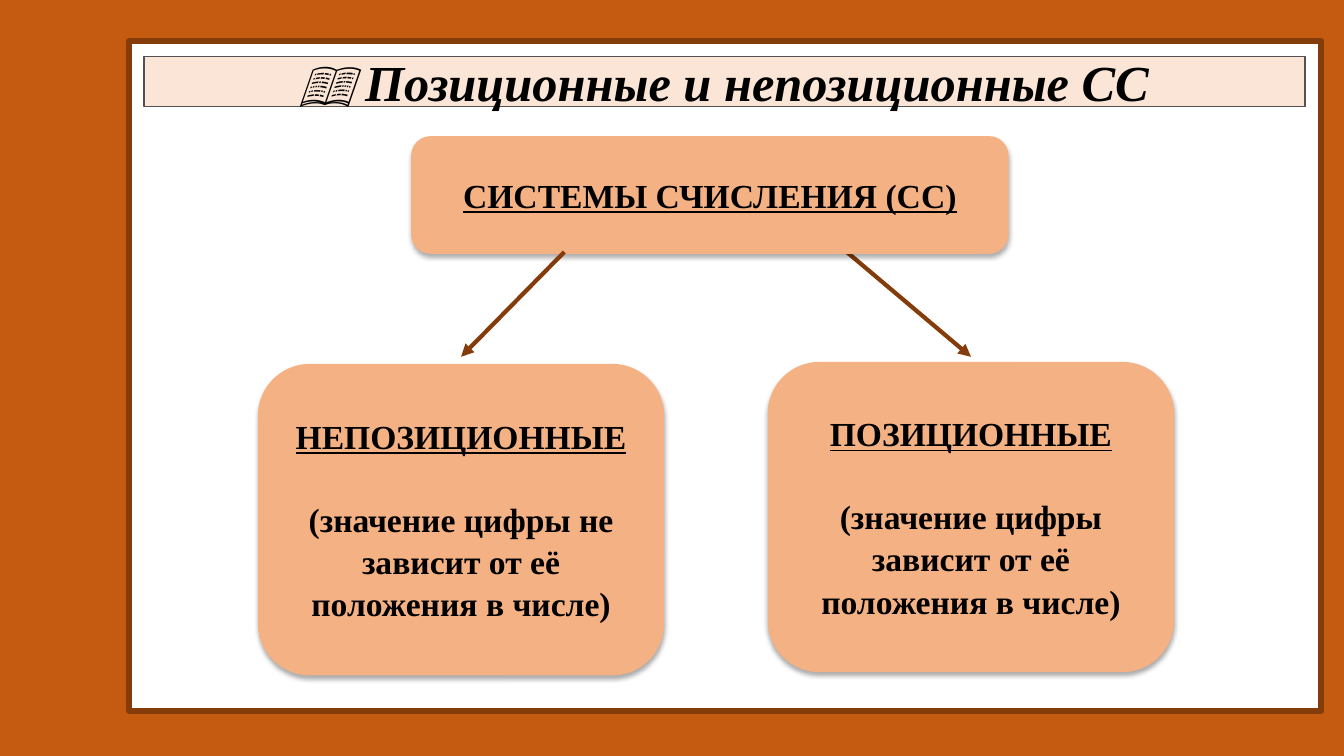
import pptx
import pptx.util
import pptx.dml.color
import pptx.enum.shapes
import pptx.enum.text
import pptx.oxml
import pptx.oxml.ns
from dataclasses import dataclass

Cm, Pt = pptx.util.Cm, pptx.util.Pt
Kind = pptx.enum.shapes.MSO_SHAPE

# Boxes are left, top, width, height in cm
TITLE = "📖 Позиционные и непозиционные СС"
PANEL = (3.25, 1.04, 30.05, 16.87)
BAR = (3.63, 1.42, 29.26, 1.27)
ROOT = ((10.36, 3.43, 15.06, 2.97), "СИСТЕМЫ СЧИСЛЕНИЯ (СС)", None)
KINDS = [
    ((19.35, 9.12, 10.24, 7.82), "ПОЗИЦИОННЫЕ",
     "(значение цифры зависит от её положения в числе)"),
    ((6.5, 9.17, 10.24, 7.85), "НЕПОЗИЦИОННЫЕ",
     "(значение цифры не зависит от её положения в числе)"),
]
STARTS = [21.34, 14.22]
ARROW_TOP, ARROW_END = 6.35, 8.99


@dataclass(frozen=True)
class Theme:
    back: str = "C55A11"
    panel: str = "FFFFFF"
    edge: str = "843C0B"
    bar: str = "FBE5D6"
    rim: str = "525252"
    card: str = "F4B183"
    ink: str = "000000"
    font: str = "Times New Roman"
    title: int = 36
    body: int = 24
    gap: int = 29
    pitch: float = 1.05


LOOK = Theme()


def color(code):
    return pptx.dml.color.RGBColor.from_string(code)


def paint(shape, fill, line=None, width=0):
    shape.fill.solid()
    shape.fill.fore_color.rgb = color(fill)
    if line:
        shape.line.color.rgb = color(line)
        shape.line.width = Pt(width)
    else:
        shape.line.fill.background()


def style(para, size):
    para.alignment = pptx.enum.text.PP_ALIGN.CENTER
    font = para.font
    font.name, font.size, font.bold = LOOK.font, Pt(size), True
    font.color.rgb = color(LOOK.ink)


def shade(shape):
    """Give the shape a soft shadow falling straight down."""
    shape.shadow.inherit = False
    effects = shape.element.spPr.find(pptx.oxml.ns.qn("a:effectLst"))
    effects.append(pptx.oxml.parse_xml(
        f'<a:outerShdw {pptx.oxml.ns.nsdecls("a")} blurRad="{Pt(3.5)}" '
        f'dist="{Pt(2.2)}" dir="5400000" algn="t" rotWithShape="0">'
        f'<a:srgbClr val="{LOOK.ink}"><a:alpha val="32000"/></a:srgbClr>'
        '</a:outerShdw>'))


def add_card(slide, box, head, note):
    card = slide.shapes.add_shape(Kind.ROUNDED_RECTANGLE, *map(Cm, box))
    paint(card, LOOK.card)
    shade(card)
    frame = card.text_frame
    frame.word_wrap = True
    frame.vertical_anchor = pptx.enum.text.MSO_ANCHOR.MIDDLE
    para = frame.paragraphs[0]
    para.text = head
    style(para, LOOK.body)
    para.font.underline = True
    if note:
        para.space_after = Pt(LOOK.gap)
        para = frame.add_paragraph()
        para.text = note
        style(para, LOOK.body)
        para.line_spacing = LOOK.pitch


def add_arrow(slide, start, box):
    """Draw an arrow from the root down to just above the middle of a box."""
    middle = box[0] + box[2] / 2
    arrow = slide.shapes.add_connector(
        pptx.enum.shapes.MSO_CONNECTOR.STRAIGHT,
        Cm(start), Cm(ARROW_TOP), Cm(middle), Cm(ARROW_END))
    arrow.line.color.rgb = color(LOOK.edge)
    arrow.line.width = Pt(3)
    names = pptx.oxml.ns.nsdecls("a")
    arrow.line._get_or_add_ln().append(
        pptx.oxml.parse_xml(f'<a:tailEnd {names} type="triangle"/>'))
    arrow._element.spPr.append(pptx.oxml.parse_xml(f'<a:effectLst {names}/>'))


def add_title(slide):
    title = slide.shapes.title
    title.left, title.top, title.width, title.height = map(Cm, BAR)
    paint(title, LOOK.bar, LOOK.rim, 1)
    frame = title.text_frame
    frame.text = TITLE
    frame.word_wrap = True
    frame.auto_size = pptx.enum.text.MSO_AUTO_SIZE.NONE
    frame.vertical_anchor = pptx.enum.text.MSO_ANCHOR.MIDDLE
    style(frame.paragraphs[0], LOOK.title)
    frame.paragraphs[0].font.italic = True
    return title


def main():
    deck = pptx.Presentation()
    deck.slide_width, deck.slide_height = Cm(33.87), Cm(19.05)
    slide = deck.slides.add_slide(deck.slide_layouts[5])
    slide.background.fill.solid()
    slide.background.fill.fore_color.rgb = color(LOOK.back)

    panel = slide.shapes.add_shape(Kind.RECTANGLE, *map(Cm, PANEL))
    paint(panel, LOOK.panel, LOOK.edge, 4.5)
    panel.shadow.inherit = False
    title = add_title(slide)
    title.element.addprevious(panel.element)

    right, left = KINDS
    add_arrow(slide, STARTS[0], right[0])
    add_card(slide, *ROOT)
    add_arrow(slide, STARTS[1], left[0])
    for kind in KINDS:
        add_card(slide, *kind)
    deck.save("out.pptx")


if __name__ == "__main__":
    main()
